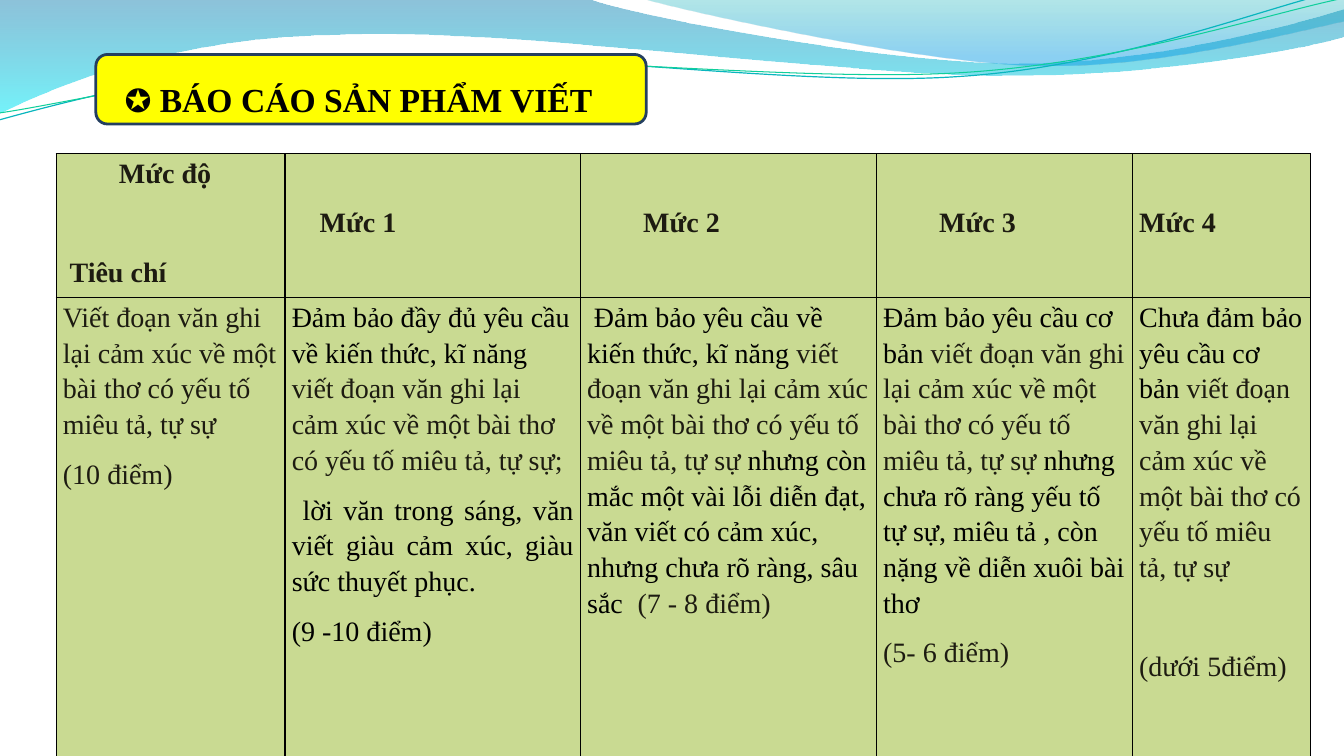
"""Build a slide with a scoring table under a wavy banner."""
from dataclasses import dataclass

from lxml.etree import SubElement
from pptx import Presentation
from pptx.dml.color import RGBColor as Rgb
from pptx.enum.shapes import MSO_SHAPE as Kind
from pptx.enum.text import PP_ALIGN as Align
from pptx.oxml import parse_xml as to_xml
from pptx.oxml.ns import nsdecls, qn
from pptx.util import Emu, Inches, Pt

WIDE, HIGH = Inches(13.33), Inches(7.5)
FONT = "Times New Roman"
HEX = {
    "black": "000000", "ink": "1D1B11", "cell": "C9DA92", "label": "FFFF00",
    "edge": "243F60", "deep": "0079AD", "aqua": "00E9F7", "teal": "00ABB4",
    "sky": "0099E4", "thread": "09B6BE", "mint": "10CF9B",
}


def col(share: float) -> Emu:
    """Turn hundredths of the slide width into a length."""
    return Emu(round(WIDE * share / 100))


def row(share: float) -> Emu:
    """Turn hundredths of the slide height into a length."""
    return Emu(round(HIGH * share / 100))


@dataclass(frozen=True)
class Wave:
    """A curve of straight (2 numbers) and Bezier (6 numbers) steps."""
    start: tuple[float, float]
    steps: tuple[tuple[float, ...], ...]
    stops: tuple[tuple[int, str, int], ...] = ()
    line: str = ""
    width: float = 0


@dataclass(frozen=True)
class Para:
    """A paragraph of (text, colour) runs; indents and tab in columns."""
    runs: tuple[tuple[str, str], ...]
    left: float = 0
    first: float = 0
    gap: float = 0
    tab: float = 0
    bold: bool = False
    just: bool = False


@dataclass(frozen=True)
class Cell:
    """A table cell with its top inset in rows."""
    paras: tuple[Para, ...]
    top: float = 0


def head(text: str, left: float, gap: float = 0) -> Para:
    """Make a bold heading paragraph."""
    return Para(((text, "ink"),), left=left, gap=gap, bold=True)


SKIP = 35.5
DROP = 6.56
POEM = "viết đoạn văn ghi lại cảm xúc về một bài thơ có yếu tố miêu tả, tự sự"

WAVES = (
    Wave((0, 0), ((44, -0.1), (47.55, 2.27, 66.38, 8.4, 75.83, 8.4),
                  (85.35, 8.4, 95.85, 3.47, 100, 1.2), (100.13, 4.8),
                  (98.33, 5.87, 87, 10.13, 74.55, 10),
                  (62.18, 10, 38.18, 3.73, 25.73, 4.53),
                  (12.9, 4.8, 4.58, 11.07, -0.08, 15.07)),
         stops=((0, "deep", 45), (100, "aqua", 55))),
    Wave((47.93, -0.1), ((50.93, 1.47, 68.18, 8.27, 76.88, 8.67),
                         (85.58, 9.2, 96.15, 4.27, 100, 2.8), (100, 0)),
         stops=((0, "teal", 30), (80, "sky", 45), (100, "sky", 45))),
    Wave((-0.08, 15.87), ((4.8, 13.47, 15.83, 8.27, 27.68, 7.33),
                          (39.53, 6.4, 59.25, 11.6, 71.25, 10.13),
                          (83.25, 8.8, 93.9, 1.07, 99.83, -1.33)),
         line="thread", width=0.85),
    Wave((0, 14.93), ((4.73, 13.73, 16.35, 8.8, 28.35, 7.87),
                      (40.28, 7.07, 59.7, 10.93, 71.63, 9.6),
                      (83.63, 8.27, 94.13, 1.87, 100.05, -0.27)),
         line="mint", width=0.75),
)

COLS = (17.03, 21.98, 22.02, 19.05, 13.28)
ROWS = (19.07, 61.73)
GRID = (
    (Cell((head("Mức độ", 4.17), head("Tiêu chí", 0.5, SKIP))),
     Cell((head("Mức 1", 2.08),), DROP), Cell((head("Mức 2", 4.17),), DROP),
     Cell((head("Mức 3", 4.17),), DROP), Cell((head("Mức 4", 0),), DROP)),
    (Cell((Para(((POEM.capitalize(), "ink"),)), Para((("(10 điểm)", "ink"),)))),
     Cell((Para((("Đảm bảo đầy đủ yêu cầu về kiến thức, kĩ năng ", "black"),
                 (POEM + ";", "ink"))),
           Para((("lời văn trong sáng, văn viết giàu cảm xúc, giàu sức thuyết phục.",
                  "black"),), first=0.8, just=True),
           Para((("(9 -10 điểm)", "black"),), just=True))),
     Cell((Para((("Đảm bảo yêu cầu về kiến thức, kĩ năng", "black"),
                 (f" {POEM} ", "ink"),
                 ("nhưng còn mắc một vài lỗi diễn đạt, văn viết có cảm xúc, "
                  "nhưng chưa rõ ràng, sâu sắc", "black"),
                 ("\t(7 - 8 điểm)", "ink")), first=0.5, tab=7.35),)),
     Cell((Para((("Đảm bảo yêu cầu cơ bản ", "black"), (POEM + " ", "ink"),
                 ("nhưng chưa rõ ràng yếu tố tự sự, miêu tả , "
                  "còn nặng về diễn xuôi bài thơ", "black"))),
           Para((("(5- 6 điểm)", "ink"),)))),
     Cell((Para((("Chưa đảm bảo yêu cầu cơ bản ", "black"), (POEM, "ink"))),
           Para((("(dưới 5điểm)", "ink"),), gap=SKIP)))),
)


def bend(shape, wave: Wave) -> None:
    """Join each three points of a Bezier step into one curve."""
    legs = iter(list(shape._element.iter(qn("a:lnTo"))))
    for step in wave.steps:
        trio = [next(legs) for _ in range(len(step) // 2)]
        if len(trio) == 3:
            curve = to_xml(f'<a:cubicBezTo {nsdecls("a")}/>')
            trio[0].addprevious(curve)
            for leg in trio:
                curve.append(leg[0])
                leg.getparent().remove(leg)


def draw_wave(shapes, wave: Wave) -> None:
    """Draw a filled or a plain line wave."""
    pen = shapes.build_freeform(col(wave.start[0]), row(wave.start[1]))
    pen.add_line_segments([(col(x), row(y)) for step in wave.steps
                           for x, y in zip(step[::2], step[1::2])],
                          close=bool(wave.stops))
    shape = pen.convert_to_shape()
    bend(shape, wave)
    shape.shadow.inherit = False
    shape.fill.background()
    if wave.line:
        shape.line.color.rgb = Rgb.from_string(HEX[wave.line])
        shape.line.width = Pt(wave.width)
        return
    shape.line.fill.background()
    stops = "".join(
        f'<a:gs pos="{at * 1000}"><a:srgbClr val="{HEX[hue]}">'
        f'<a:alpha val="{see * 1000}"/></a:srgbClr></a:gs>'
        for at, hue, see in wave.stops)
    fade = to_xml(f'<a:gradFill {nsdecls("a")} rotWithShape="1"><a:gsLst>{stops}'
                  '</a:gsLst><a:lin ang="5400000" scaled="0"/></a:gradFill>')
    none = shape.fill._xPr.find(qn("a:noFill"))
    none.getparent().replace(none, fade)


def write(frame, paras: tuple[Para, ...], size: float) -> None:
    """Fill a text frame with paragraphs."""
    frame.word_wrap = True
    for n, para in enumerate(paras):
        line = frame.add_paragraph() if n else frame.paragraphs[0]
        line.line_spacing, line.space_after = 1.15, Pt(10)
        line.space_before = Pt(para.gap)
        line.alignment = Align.JUSTIFY if para.just else Align.LEFT
        line.font.name, line.font.size = FONT, Pt(size)
        line.font.bold = para.bold
        props = line._p.get_or_add_pPr()
        props.set("marL", str(col(para.left)))
        props.set("indent", str(col(para.first)))
        if para.tab:
            tabs = to_xml(f'<a:tabLst {nsdecls("a")}>'
                          f'<a:tab pos="{col(para.tab)}" algn="l"/></a:tabLst>')
            props.find(qn("a:defRPr")).addprevious(tabs)
        for text, hue in para.runs:
            run = line.add_run()
            run.text = text
            run.font.color.rgb = Rgb.from_string(HEX[hue])


def draw_cell(box, cell: Cell) -> None:
    """Fill, frame and write one table cell."""
    box.margin_left = box.margin_right = col(0.5)
    box.margin_top, box.margin_bottom = row(cell.top), 0
    props = box._tc.get_or_add_tcPr()
    for side in ("lnL", "lnR", "lnT", "lnB"):
        edge = SubElement(props, qn(f"a:{side}"), w=str(Pt(1)))
        fill = SubElement(edge, qn("a:solidFill"))
        SubElement(fill, qn("a:srgbClr"), val=HEX["black"])
    box.fill.solid()
    box.fill.fore_color.rgb = Rgb.from_string(HEX["cell"])
    write(box.text_frame, cell.paras, 20)


def draw_title(shapes) -> None:
    """Draw the yellow label and its title."""
    box = shapes.add_shape(Kind.ROUNDED_RECTANGLE, col(7.13), row(7.2),
                           col(40.95), row(9.2))
    box.shadow.inherit = False
    box.fill.solid()
    box.fill.fore_color.rgb = Rgb.from_string(HEX["label"])
    box.line.color.rgb = Rgb.from_string(HEX["edge"])
    box.line.width = Pt(2)
    text = shapes.add_textbox(col(8.55), row(8.93), col(44.18), row(7.2)).text_frame
    write(text, (Para((("✪ ", "black"), ("BÁO CÁO SẢN PHẨM VIẾT", "black"))),), 24)
    text.paragraphs[0].runs[1].font.bold = True


def draw_table(shapes) -> None:
    """Draw the scoring table."""
    table = shapes.add_table(len(ROWS), len(COLS), col(4.18), row(20.33),
                             col(sum(COLS)), row(sum(ROWS))).table
    table.first_row = table.horz_banding = False
    for n, share in enumerate(COLS):
        table.columns[n].width = col(share)
    for n, share in enumerate(ROWS):
        table.rows[n].height = row(share)
        for m, cell in enumerate(GRID[n]):
            draw_cell(table.cell(n, m), cell)


def main() -> None:
    """Build and save the slide."""
    deck = Presentation()
    deck.slide_width, deck.slide_height = WIDE, HIGH
    shapes = deck.slides.add_slide(deck.slide_layouts[6]).shapes
    for wave in WAVES:
        draw_wave(shapes, wave)
    draw_title(shapes)
    draw_table(shapes)
    deck.save("out.pptx")


if __name__ == "__main__":
    main()
